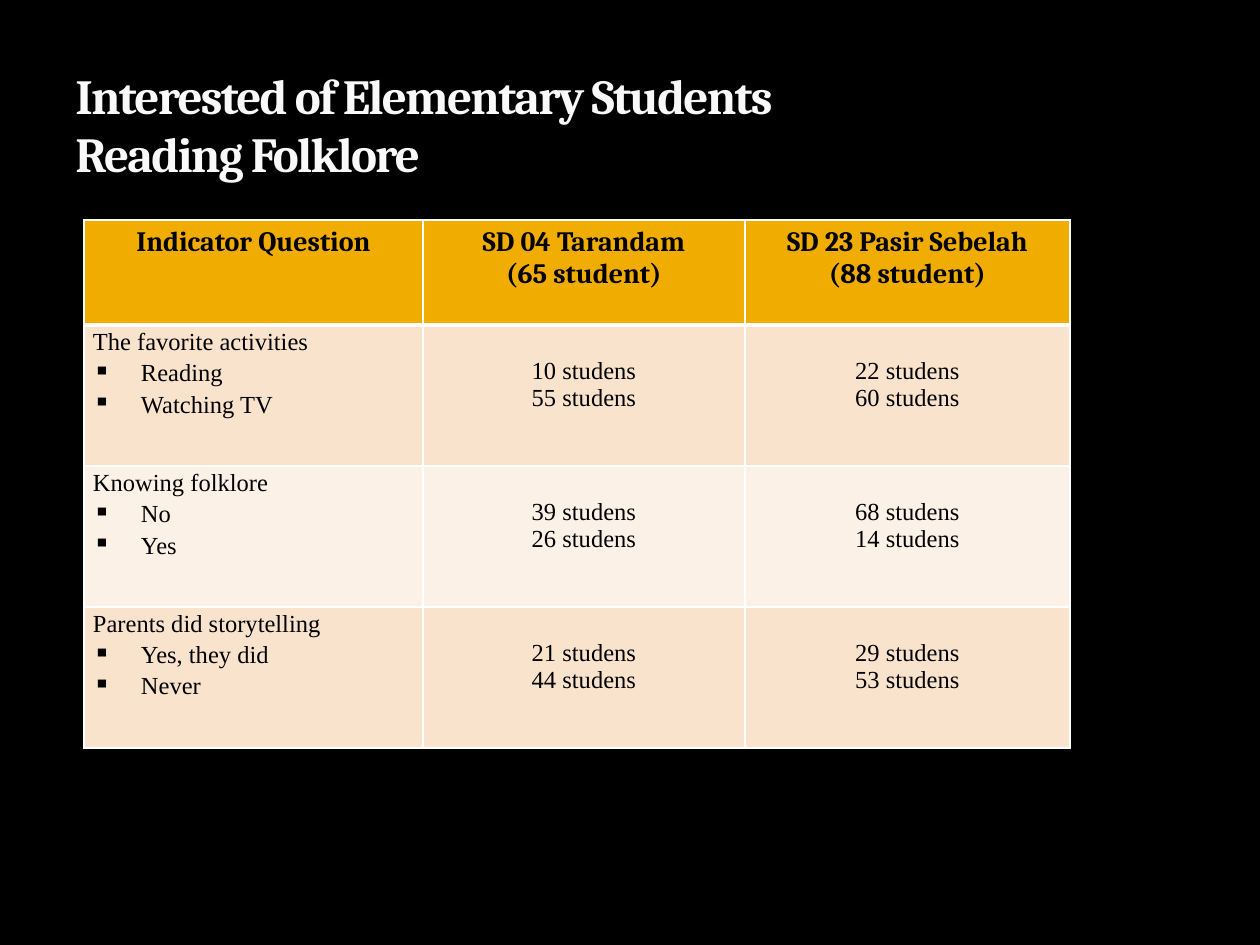
from lxml.etree import SubElement
from pptx import Presentation
from pptx.dml.color import RGBColor
from pptx.enum.text import MSO_ANCHOR, PP_ALIGN
from pptx.oxml.ns import qn
from pptx.util import Pt

SCALE = 914400 / 126
BLACK = RGBColor(0, 0, 0)
WHITE = RGBColor(0xF9, 0xF9, 0xF9)
GOLD = RGBColor(0xF0, 0xAD, 0x00)
PEACH = RGBColor(0xF9, 0xE3, 0xCC)
CREAM = RGBColor(0xFC, 0xF1, 0xE7)

COLS = [339, 322, 325]
ROWS = [105, 141, 141, 141]
DATA = [
    ["Indicator Question", "SD 04 Tarandam\n(65 student)", "SD 23 Pasir Sebelah\n(88 student)"],
    ["The favorite activities\nReading\nWatching TV", "10 studens\n55 studens", "22 studens\n60 studens"],
    ["Knowing folklore\nNo\nYes", "39 studens\n26 studens", "68 studens\n14 studens"],
    ["Parents did storytelling\nYes, they did\nNever", "21 studens\n44 studens", "29 studens\n53 studens"],
]


def px(n):
    return round(n * SCALE)


def style(par, font, size, color, bold):
    for run in par.runs:
        run.font.name = font
        run.font.size = Pt(size)
        run.font.color.rgb = color
        run.font.bold = bold


prs = Presentation()
prs.slide_width, prs.slide_height = px(1260), px(945)
slide = prs.slides.add_slide(prs.slide_layouts[6])
slide.background.fill.solid()
slide.background.fill.fore_color.rgb = BLACK

# Title
title = slide.shapes.add_textbox(px(63), px(21), px(1134), px(168))
frame = title.text_frame
frame.word_wrap = True
frame.vertical_anchor = MSO_ANCHOR.BOTTOM
frame.text = "Interested of Elementary Students\nReading Folklore"
for par in frame.paragraphs:
    style(par, "Cambria", 28, WHITE, True)
    for run in par.runs:
        run.font._element.set("spc", "-100")

# Table
table = slide.shapes.add_table(len(ROWS), len(COLS), px(84), px(220), px(sum(COLS)), px(sum(ROWS))).table
for col, width in zip(table.columns, COLS):
    col.width = px(width)
for row, height in zip(table.rows, ROWS):
    row.height = px(height)

for i, texts in enumerate(DATA):
    for j, text in enumerate(texts):
        cell = table.cell(i, j)
        head, label = i == 0, i > 0 and j == 0

        # Borders go before the fill in the cell properties
        props = cell._tc.get_or_add_tcPr()
        for side in ("lnL", "lnR", "lnT", "lnB"):
            thick = (i, side) in ((0, "lnB"), (1, "lnT"))
            line = SubElement(props, qn(f"a:{side}"), w=str(Pt(3 if thick else 1)))
            fill = SubElement(line, qn("a:solidFill"))
            SubElement(fill, qn("a:srgbClr"), val="FFFFFF")
        cell.fill.solid()
        cell.fill.fore_color.rgb = GOLD if head else PEACH if i % 2 else CREAM

        if label:
            cell.margin_left = cell.margin_right = px(9)
            cell.margin_top = cell.margin_bottom = 0
        elif not head:
            cell.margin_top = px(33)  # level with the first bullet

        cell.text_frame.text = text
        for k, par in enumerate(cell.text_frame.paragraphs):
            par.alignment = PP_ALIGN.JUSTIFY if label else PP_ALIGN.CENTER
            if head:
                style(par, "Cambria", 16, BLACK, True)
            else:
                style(par, "Times New Roman", 14, BLACK, False)
            if label:
                par.line_spacing = 1.15
            if label and k:
                ppr = par._p.get_or_add_pPr()
                ppr.set("marL", str(px(48)))
                ppr.set("indent", str(px(-48)))
                SubElement(ppr, qn("a:buChar"), char="▪")

prs.save("out.pptx")
